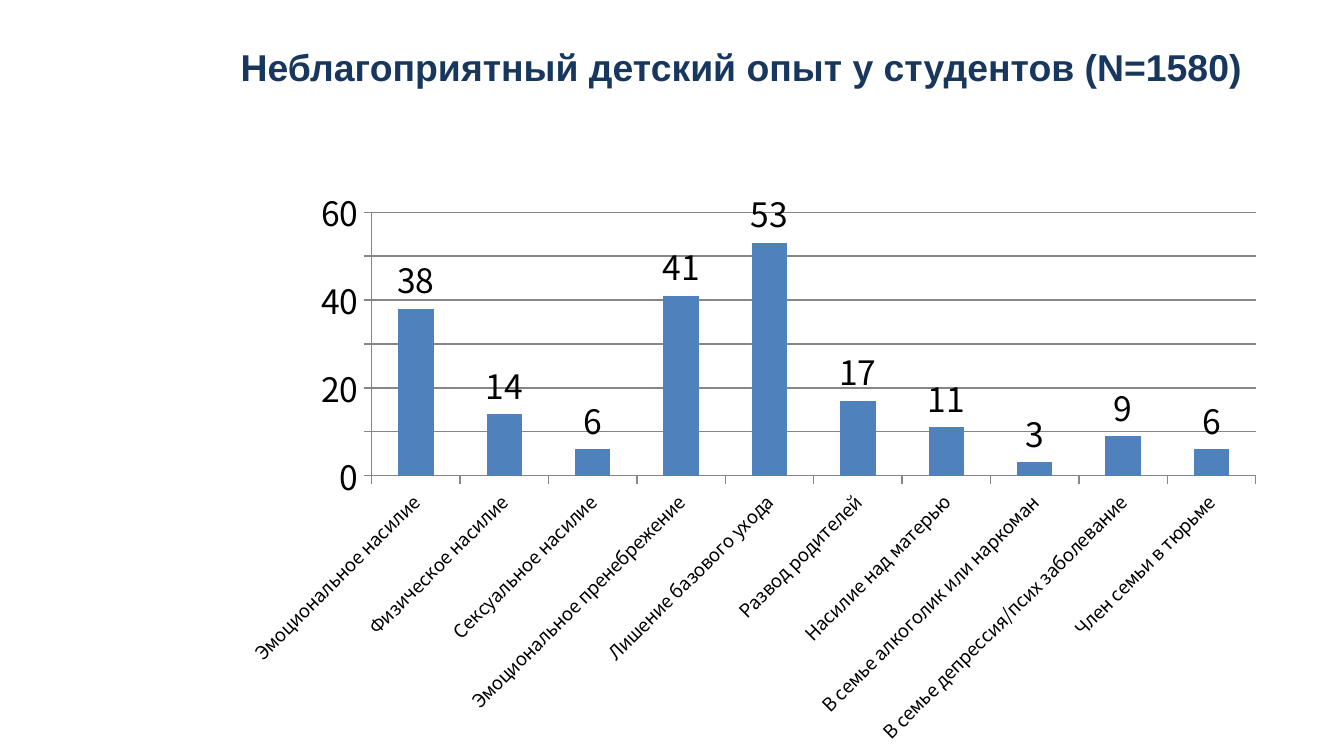
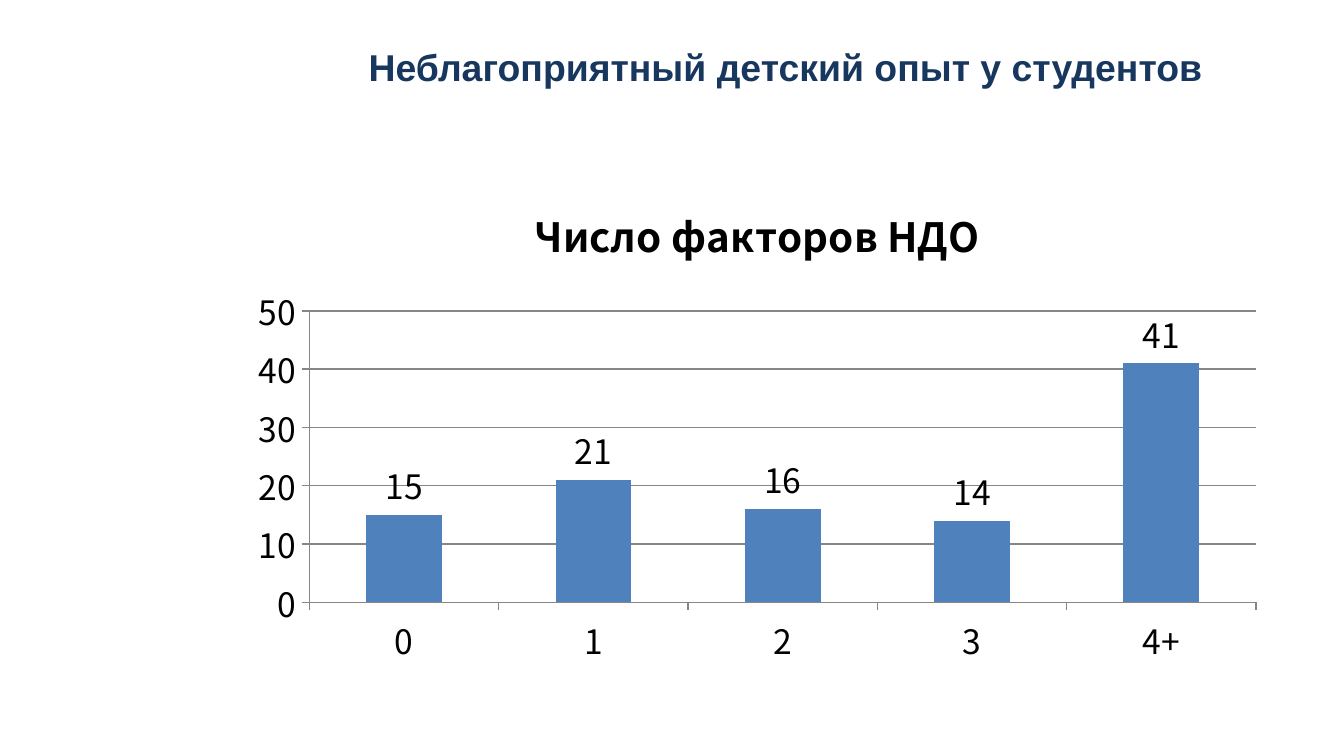
from dataclasses import dataclass

from pptx import Presentation
from pptx.chart.data import CategoryChartData
from pptx.dml.color import RGBColor as RGB
from pptx.enum.chart import XL_CHART_TYPE as ChartType
from pptx.enum.chart import XL_LABEL_POSITION as LabelPosition
from pptx.enum.chart import XL_TICK_MARK as TickMark
from pptx.enum.text import MSO_ANCHOR as Anchor
from pptx.enum.text import PP_ALIGN as Align
from pptx.oxml.ns import qn
from pptx.util import Cm, Pt


@dataclass(frozen=True)
class Theme:
    heading_font: str = "Arial"
    chart_font: str = "Noto Sans CJK KR"
    heading_color: RGB = RGB(0x17, 0x37, 0x5E)
    text_color: RGB = RGB(0, 0, 0)
    bar_color: RGB = RGB(0x4F, 0x81, 0xBD)
    grid_color: RGB = RGB(0x86, 0x86, 0x86)
    heading_size: Pt = Pt(20)
    chart_title_size: Pt = Pt(21.6)
    chart_size: Pt = Pt(18)
    small_size: Pt = Pt(10)
    line_width: Pt = Pt(0.75)


THEME = Theme()
LEFT = Cm(4.3)
CHART_TOP = Cm(3.33)
CHART_RIGHT = Cm(24.13)

EXPERIENCES = {
    "Эмоциональное насилие": 38,
    "Физическое насилие": 14,
    "Сексуальное насилие": 6,
    "Эмоциональное пренебрежение": 41,
    "Лишение базового ухода": 53,
    "Развод родителей": 17,
    "Насилие над матерью": 11,
    "В семье алкоголик или наркоман": 3,
    "В семье депрессия/псих заболевание": 9,
    "Член семьи в тюрьме": 6,
}
FACTOR_COUNTS = {"0": 15, "1": 21, "2": 16, "3": 14, "4+": 41}


def style_font(font, name, size, color, bold=False):
    font.name = name
    font.size = size
    font.bold = bold
    font.color.rgb = color


def add_heading(slide, text, align):
    frame = slide.shapes.add_textbox(LEFT, Cm(0.06), Cm(21.1), Cm(2.39)).text_frame
    frame.word_wrap = True
    frame.vertical_anchor = Anchor.MIDDLE
    heading = frame.paragraphs[0]
    heading.text = text
    heading.alignment = align
    style_font(heading.font, THEME.heading_font, THEME.heading_size,
               THEME.heading_color, bold=True)


def style_line(line):
    line.color.rgb = THEME.grid_color
    line.width = THEME.line_width


def style_axes(chart, maximum, category_size, rotation):
    categories, values = chart.category_axis, chart.value_axis
    for axis, size in ((categories, category_size), (values, THEME.chart_size)):
        axis.major_tick_mark = TickMark.OUTSIDE
        axis.minor_tick_mark = TickMark.NONE
        style_line(axis.format.line)
        style_font(axis.tick_labels.font, THEME.chart_font, size, THEME.text_color)
    categories.has_major_gridlines = False
    if rotation:
        body = categories._element.find(qn("c:txPr")).find(qn("a:bodyPr"))
        body.set("rot", str(rotation * 60000))
        body.set("vert", "horz")
    values.has_major_gridlines = True
    style_line(values.major_gridlines.format.line)
    values.minimum_scale = 0
    values.maximum_scale = maximum
    values.major_unit = 10


def style_bars(chart):
    plot = chart.plots[0]
    plot.gap_width = 150
    plot.vary_by_categories = False
    fill = plot.series[0].format.fill
    fill.solid()
    fill.fore_color.rgb = THEME.bar_color
    plot.has_data_labels = True
    labels = plot.data_labels
    labels.show_value = True
    labels.position = LabelPosition.OUTSIDE_END
    style_font(labels.font, THEME.chart_font, THEME.chart_size, THEME.text_color)


def add_bar_chart(slide, series_name, counts, left, height, maximum,
                  title=None, category_size=THEME.chart_size, rotation=0):
    data = CategoryChartData()
    data.categories = list(counts)
    data.add_series(series_name, list(counts.values()))
    chart = slide.shapes.add_chart(ChartType.COLUMN_CLUSTERED, left, CHART_TOP,
                                   CHART_RIGHT - left, height, data).chart
    style_font(chart.font, THEME.chart_font, THEME.chart_size, THEME.text_color)
    chart.has_legend = False
    chart.has_title = title is not None
    if title:
        caption = chart.chart_title.text_frame.paragraphs[0]
        caption.text = title
        style_font(caption.font, THEME.chart_font, THEME.chart_title_size,
                   THEME.text_color, bold=True)
        chart.chart_title.include_in_layout = False
    style_axes(chart, maximum, category_size, rotation)
    style_bars(chart)


def main():
    deck = Presentation()
    deck.slide_width, deck.slide_height = Cm(25.4), Cm(14.29)
    blank = deck.slide_layouts[6]

    experience = deck.slides.add_slide(blank)
    add_heading(experience, "Неблагоприятный детский опыт у студентов (N=1580)",
                Align.LEFT)
    add_bar_chart(experience, "Series 1", EXPERIENCES, LEFT, Cm(10.96), 60,
                  category_size=THEME.small_size, rotation=-45)

    factors = deck.slides.add_slide(blank)
    add_heading(factors, "Неблагоприятный детский опыт у студентов", Align.CENTER)
    add_bar_chart(factors, "Число факторов НДО", FACTOR_COUNTS, Cm(4.5), Cm(9.42), 50,
                  title="Число факторов НДО")

    deck.save("out.pptx")


if __name__ == "__main__":
    main()
